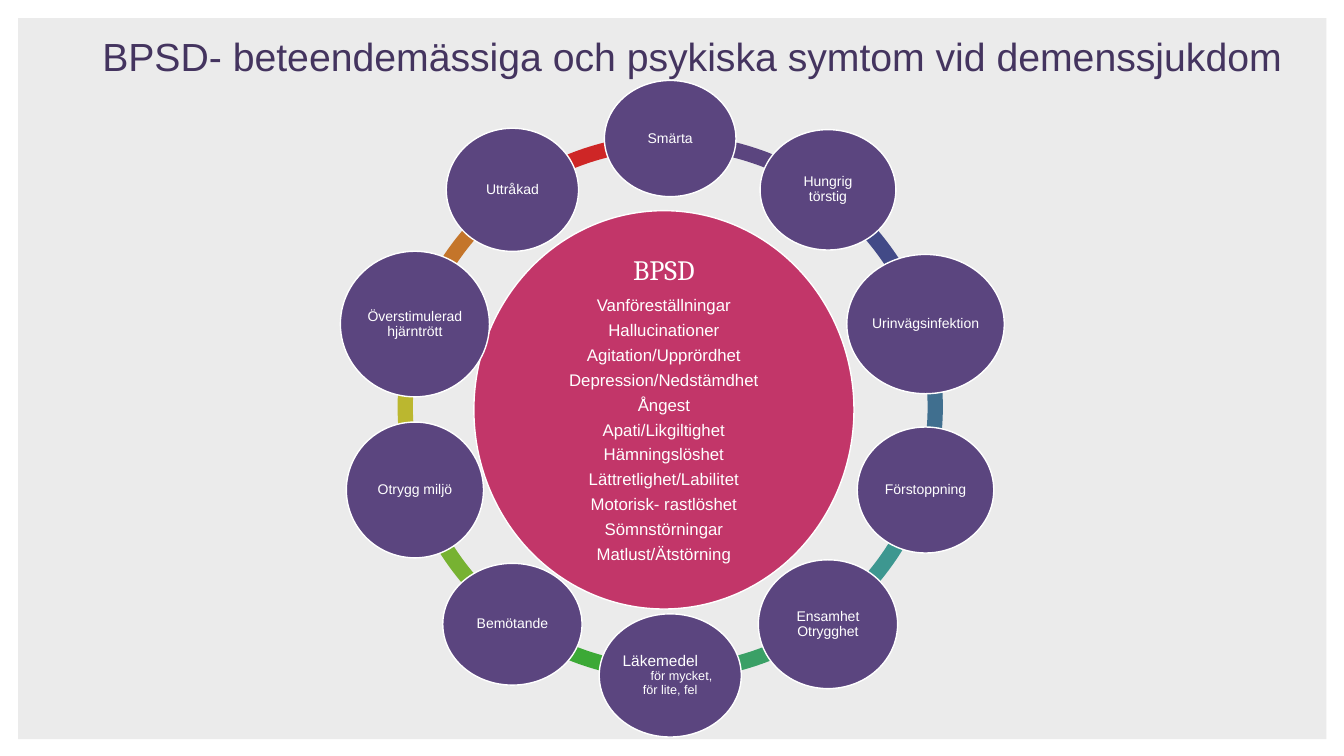
from dataclasses import dataclass
from math import cos, radians, sin

from pptx import Presentation
from pptx.dml.color import RGBColor
from pptx.enum.shapes import MSO_SHAPE
from pptx.enum.text import MSO_ANCHOR, PP_ALIGN
from pptx.util import Pt

WHITE = RGBColor(0xFF, 0xFF, 0xFF)
PANEL_GREY = RGBColor(0xEB, 0xEB, 0xEB)
TITLE_PURPLE = RGBColor(0x44, 0x34, 0x5F)
NODE_PURPLE = RGBColor(0x5B, 0x45, 0x7F)
CORE_PINK = RGBColor(0xC2, 0x36, 0x69)
# Clockwise from the top
ARC_COLORS = [RGBColor.from_string(code) for code in (
    "5B457F", "424A87", "406F8F", "3D9790", "3AA066",
    "3CA936", "77B232", "BBB72F", "C4752A", "CE2626")]


@dataclass
class Line:
    text: str
    size: float = 10
    font: str = "Arial"
    after: float = 0
    left: float = 0
    right: float = 0


SYMPTOMS = [
    "Vanföreställningar", "Hallucinationer", "Agitation/Upprördhet",
    "Depression/Nedstämdhet", "Ångest", "Apati/Likgiltighet",
    "Hämningslöshet", "Lättretlighet/Labilitet", "Motorisk- rastlöshet",
    "Sömnstörningar", "Matlust/Ätstörning"]

# Width, height and lines of each cause, clockwise from the top
CAUSES = [
    (94, 83, [Line("Smärta")]),
    (97, 86, [Line("Hungrig"), Line("törstig")]),
    (112.5, 99.5, [Line("Urinvägsinfektion")]),
    (97.5, 90, [Line("Förstoppning")]),
    (99.5, 92, [Line("Ensamhet Otrygghet")]),
    (101.5, 88, [Line("Läkemedel", 11, right=14),
                 Line("för mycket,", 9, left=16),
                 Line("för lite, fel", 9)]),
    (99.5, 87, [Line("Bemötande")]),
    (98, 97, [Line("Otrygg miljö")]),
    (106.5, 104, [Line("Överstimulerad hjärntrött")]),
    (94.5, 88, [Line("Uttråkad")]),
]


def add_filled(page, kind, left, top, width, height, fill, outlined=False):
    shape = page.shapes.add_shape(kind, Pt(left), Pt(top), Pt(width), Pt(height))
    shape.shadow.inherit = False
    shape.fill.solid()
    shape.fill.fore_color.rgb = fill
    if outlined:
        shape.line.color.rgb = WHITE
        shape.line.width = Pt(1)
    else:
        shape.line.fill.background()
    return shape


def add_span(para, text, size, font, color):
    span = para.add_run()
    span.text = text
    span.font.size = Pt(size)
    span.font.name = font
    span.font.color.rgb = color


def add_disc(page, center_x, center_y, width, height, fill, lines, inset):
    """Draw an outlined ellipse around its centre and write its lines."""
    disc = add_filled(page, MSO_SHAPE.OVAL, center_x - width / 2,
                      center_y - height / 2, width, height, fill, True)
    frame = disc.text_frame
    frame.word_wrap = True
    frame.vertical_anchor = MSO_ANCHOR.MIDDLE
    frame.margin_left = frame.margin_right = Pt(inset)
    frame.margin_top = frame.margin_bottom = Pt(inset)
    for index, line in enumerate(lines):
        para = frame.add_paragraph() if index else frame.paragraphs[0]
        para.alignment = PP_ALIGN.CENTER
        para.line_spacing = 0.9
        para.space_after = Pt(line.after)
        properties = para._p.get_or_add_pPr()
        properties.set("marL", str(Pt(line.left)))
        properties.set("marR", str(Pt(line.right)))
        add_span(para, line.text, line.size, line.font, WHITE)


def add_panel(page, left, top, width, height):
    add_filled(page, MSO_SHAPE.RECTANGLE, left, top, width, height, PANEL_GREY)


def add_title(page, left, top, width, height):
    box = page.shapes.add_textbox(Pt(left), Pt(top), Pt(width), Pt(height))
    box.text_frame.word_wrap = True
    add_span(box.text_frame.paragraphs[0],
             "BPSD- beteendemässiga och psykiska symtom vid demenssjukdom",
             28, "Arial", TITLE_PURPLE)


def add_cycle(page, left, top, size):
    center_x, center_y = left + size / 2, top + size / 2
    step = 360 / len(CAUSES)

    # Ring segments; an adjustment of 0.6 is one degree
    for index, color in enumerate(ARC_COLORS):
        arc = add_filled(page, MSO_SHAPE.BLOCK_ARC, left, top, size, size, color)
        start = 270 + index * step
        arc.adjustments[0] = start % 360 * 0.6
        arc.adjustments[1] = (start + step) % 360 * 0.6
        arc.adjustments[2] = 0.028

    # Symptoms in the middle
    core = [Line("BPSD", 20, "Cambria", after=8)]
    core += [Line(symptom, 12, after=4.8) for symptom in SYMPTOMS]
    add_disc(page, center_x - 4.5, center_y + 2, 271.5, 284.5,
             CORE_PINK, core, 2)

    # Causes around the ring
    radius = size / 2 - 3
    for index, (width, height, lines) in enumerate(CAUSES):
        angle = radians(index * step)
        add_disc(page, center_x + radius * sin(angle),
                 center_y - radius * cos(angle),
                 width, height, NODE_PURPLE, lines, 0.7)


def main():
    deck = Presentation()
    deck.slide_width, deck.slide_height = Pt(960), Pt(540)
    page = deck.slides.add_slide(deck.slide_layouts[6])
    add_panel(page, 13, 13, 934.5, 515)
    add_cycle(page, 284, 96, 389.5)
    add_title(page, 66, 19.5, 890, 41)
    deck.save("out.pptx")


if __name__ == "__main__":
    main()
